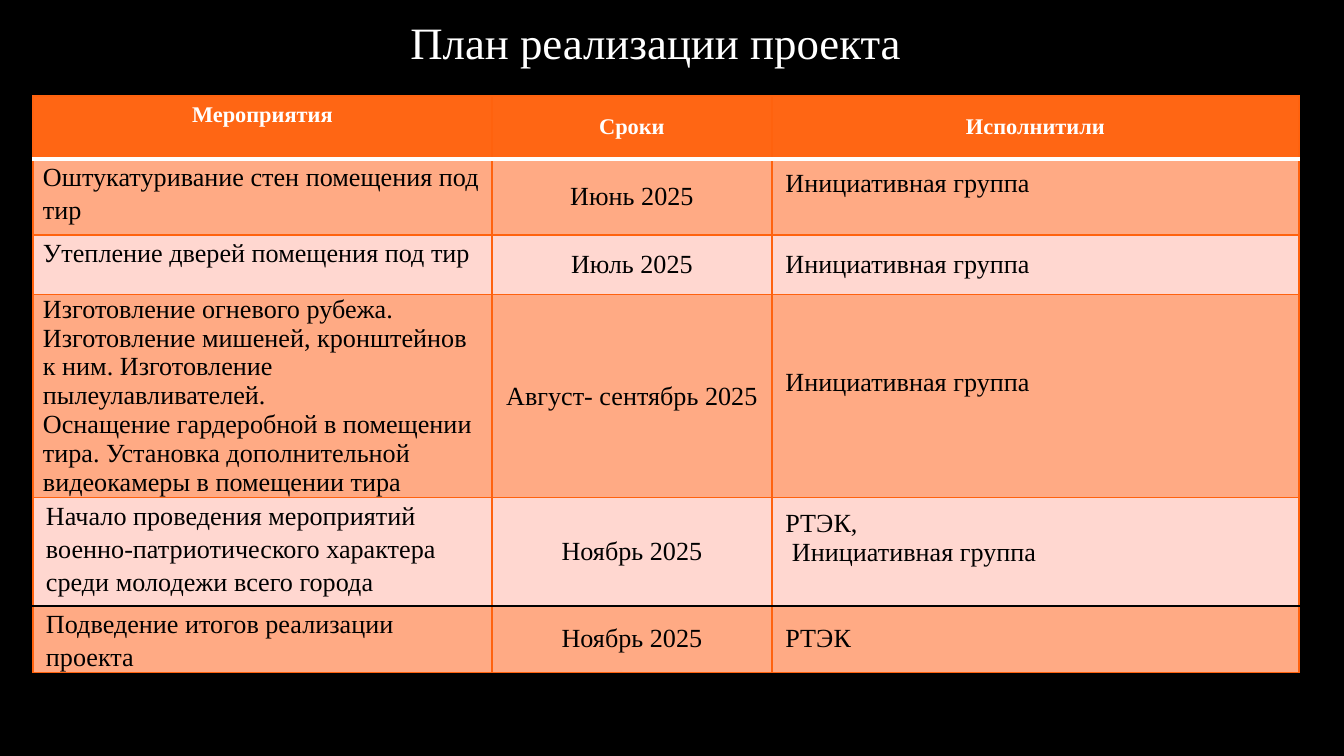
"""Build the project implementation plan slide."""
from lxml.etree import SubElement
from pptx import Presentation
from pptx.dml.color import RGBColor
from pptx.enum.shapes import MSO_SHAPE as Shape
from pptx.enum.text import MSO_ANCHOR as Anchor, MSO_AUTO_SIZE as AutoSize, PP_ALIGN as Align
from pptx.oxml.ns import qn
from pptx.util import Pt

PX = 914400 / 134.4
FONT = "Times New Roman"
ORANGE, BORDER, DARK_BAND, LIGHT_BAND = "FF6614", "FF620E", "FFAA84", "FFD7D0"
WHITE, BLACK = "FFFFFF", "000000"


def px(value):
    return round(value * PX)


def color(value):
    return RGBColor.from_string(value)


presentation = Presentation()
presentation.slide_width, presentation.slide_height = px(1344), px(756)
slide = presentation.slides.add_slide(presentation.slide_layouts[5])

title = slide.shapes.title
title.left, title.top, title.width, title.height = px(291), px(8), px(729), px(67)
frame = title.text_frame
frame.text = "План реализации проекта"
frame.word_wrap = True
frame.auto_size = AutoSize.NONE
frame.vertical_anchor = Anchor.TOP
paragraph = frame.paragraphs[0]
paragraph.alignment = Align.CENTER
paragraph.font.name, paragraph.font.size = FONT, Pt(24)
paragraph.font.color.rgb = color(WHITE)

backdrop = slide.shapes.add_shape(Shape.RECTANGLE, 0, 0, px(1344), px(756))
backdrop.shadow.inherit = False
backdrop.fill.solid()
backdrop.fill.fore_color.rgb = color(BLACK)
backdrop.line.color.rgb = color(BLACK)
backdrop.line.width = Pt(2)
title.element.addprevious(backdrop.element)

plan = [
    ("Мероприятия", "Сроки", "Исполнитили"),
    ("Оштукатуривание стен помещения под тир", "Июнь 2025", "Инициативная группа"),
    ("Утепление дверей помещения под тир", "Июль 2025", "Инициативная группа"),
    ("Изготовление огневого рубежа. Изготовление мишеней, кронштейнов к ним. "
     "Изготовление пылеулавливателей.\nОснащение гардеробной в помещении тира. "
     "Установка дополнительной видеокамеры в помещении тира",
     "Август- сентябрь 2025", "Инициативная группа"),
    ("Начало проведения мероприятий военно-патриотического характера среди молодежи всего города",
     "Ноябрь 2025", "РТЭК,\n Инициативная группа"),
    ("Подведение итогов реализации проекта", "Ноябрь 2025", "РТЭК"),
]
column_widths = [459, 280, 527]
row_heights = [63, 76, 60, 203, 108, 66]
rules = {1: (WHITE, 2), 5: (BLACK, 1)}
raised_rows = (1, 3, 4)

table = slide.shapes.add_table(
    len(plan), 3, px(33), px(96), px(sum(column_widths)), px(sum(row_heights))).table
for column, width in zip(table.columns, column_widths):
    column.width = px(width)

for row, texts in enumerate(plan):
    table.rows[row].height = px(row_heights[row])
    header = row == 0
    for column, text in enumerate(texts):
        cell = table.cell(row, column)
        cell.text = text
        activity = column == 0 and not header
        cell.vertical_anchor = Anchor.TOP if column == 0 else Anchor.MIDDLE
        if activity:
            cell.margin_left = cell.margin_right = px(13 if row > 3 else 10)
            cell.margin_top = cell.margin_bottom = 0
            if row > 3:
                cell.margin_right = px(10)
        elif column == 2 and row in raised_rows:
            cell.margin_bottom = px(34)

        for paragraph in cell.text_frame.paragraphs:
            paragraph.alignment = Align.CENTER if header or column == 1 else Align.LEFT
            if activity and row != 3:
                paragraph.line_spacing = 1.15
            paragraph.font.name = FONT
            paragraph.font.size = Pt(12 if header else 14)
            paragraph.font.bold = header
            paragraph.font.color.rgb = color(WHITE if header else BLACK)

        plain = (BORDER, 0.75)
        sides = {"L": plain, "R": plain, "T": rules.get(row, plain), "B": rules.get(row + 1, plain)}
        properties = cell._tc.get_or_add_tcPr()
        for side, (line_color, points) in sides.items():
            line = SubElement(properties, qn(f"a:ln{side}"), w=str(Pt(points)))
            SubElement(SubElement(line, qn("a:solidFill")), qn("a:srgbClr"), val=line_color)
        cell.fill.solid()
        band = DARK_BAND if row % 2 else LIGHT_BAND
        cell.fill.fore_color.rgb = color(ORANGE if header else band)

presentation.save("out.pptx")
